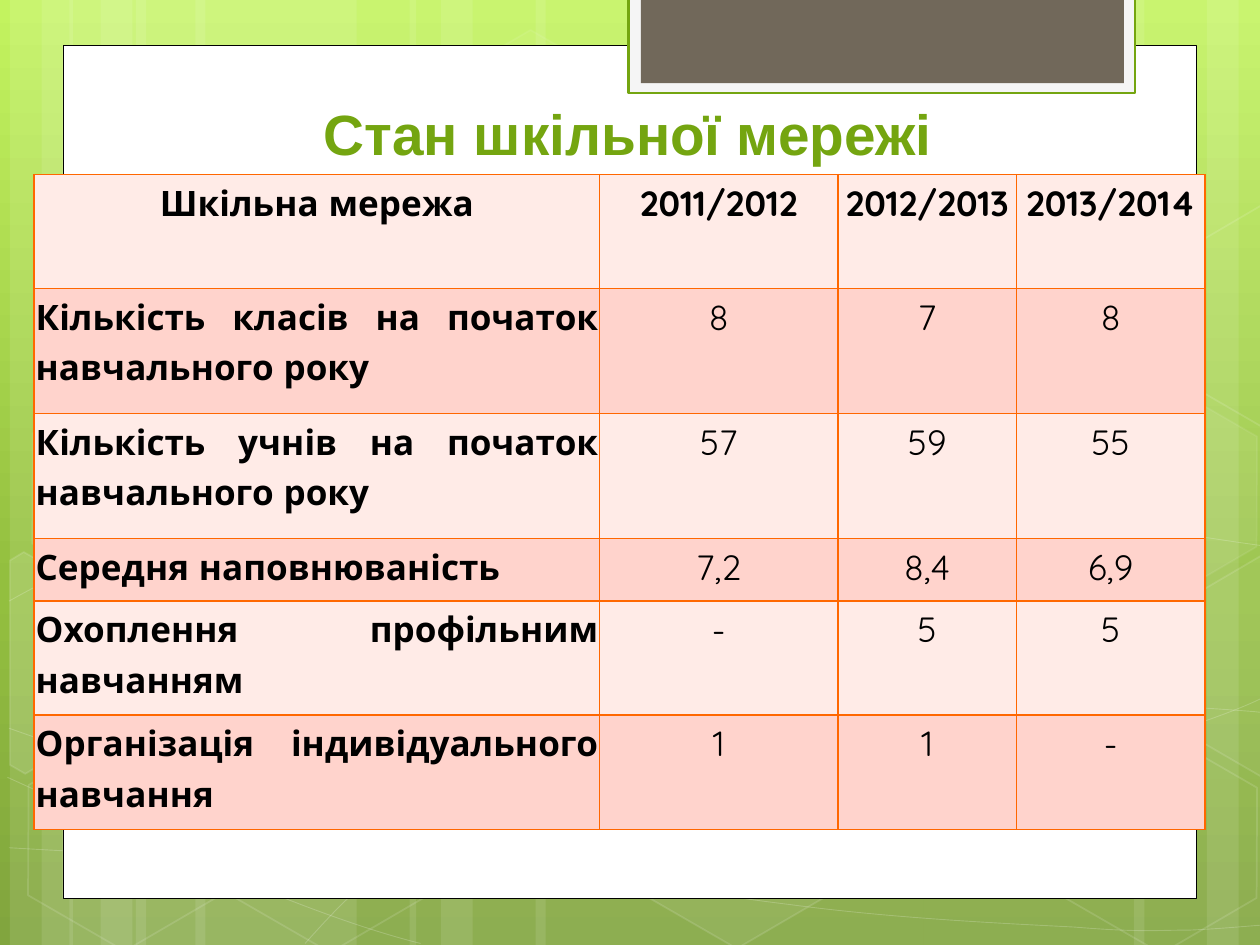
from copy import deepcopy
from dataclasses import dataclass
from typing import Optional

from lxml import etree
from pptx import Presentation
from pptx.dml.color import RGBColor
from pptx.enum.shapes import MSO_SHAPE
from pptx.enum.text import MSO_ANCHOR, PP_ALIGN
from pptx.oxml.ns import qn
from pptx.shapes.autoshape import Shape
from pptx.slide import Slide
from pptx.table import _Cell
from pptx.util import Cm, Pt

RECTANGLE, HEXAGON = MSO_SHAPE.RECTANGLE, MSO_SHAPE.HEXAGON
CENTER, JUSTIFY = PP_ALIGN.CENTER, PP_ALIGN.JUSTIFY
WHITE, BLACK, GREEN, ORANGE = "FFFFFF", "000000", "74A510", "FF6700"
WIDTH, HEIGHT = 25.4, 19.05
Point = tuple[float, float]


@dataclass
class Style:
    """Opacities are percentages; no colour means no fill or no line."""
    fill: Optional[str] = None
    fill_opacity: int = 100
    line: Optional[str] = None
    line_opacity: int = 100
    line_width: float = 1


@dataclass
class Hexagon:
    left: float
    top: float
    fill_opacity: int
    line_opacity: int


@dataclass
class CutHexagon:
    points: list[Point]
    fill_opacity: int


GRADIENT = [(0, "C3F35F"), (0.62, "93BF3F"), (1, "81A53E")]
BARS = [  # left, width
    (2.74, 4.45), (0.2, 1.27), (0.84, 2.11), (3.94, 4.45), (1.4, 1.27), (2.03, 2.11),
    (18.62, 4.45), (24.33, 1.27), (22.86, 2.11), (10.8, 7.82), (8.26, 1.27), (8.89, 2.11),
]
# Each curve: a start point, then two control points and an end point per segment
CURVES: list[list[Point]] = [
    [(0.18, 17.09), (1.55, 17.17), (2.92, 17.25), (4.83, 17.22),
     (6.73, 17.2), (9.09, 17.15), (11.63, 16.89), (14.17, 16.64), (17.78, 16.15), (20.12, 15.67),
     (22.43, 15.19), (24.82, 14.43), (25.58, 14)],
    [(0.18, 12.12), (0.91, 11.71), (1.65, 11.33), (3.07, 10.95),
     (4.52, 10.57), (6.58, 10.01), (8.81, 9.83), (11.07, 9.65), (13.82, 9.63), (16.61, 9.83),
     (19.41, 10.03), (24.05, 10.82), (25.58, 11.02)],
    [(0.15, 15.67), (3.23, 17.07), (6.27, 18.47), (8.48, 19.02)],
    [(0.18, 14.68), (0.97, 14.96), (1.78, 15.24), (3.25, 15.65),
     (4.72, 16.03), (6.93, 16.66), (9.07, 17.09), (11.18, 17.53), (13.84, 17.98), (15.95, 18.24),
     (18.06, 18.52), (20.32, 18.62), (21.67, 18.69), (22.99, 18.8), (23.34, 18.75), (24, 18.75),
     (24.66, 18.72), (25.12, 18.67), (25.58, 18.64)],
    [(6.15, 19.02), (6.6, 18.52), (7.06, 18.01), (7.67, 17.55),
     (8.28, 17.09), (9.14, 16.59), (9.86, 16.23), (10.57, 15.88), (11, 15.72), (11.94, 15.47),
     (12.85, 15.21), (14.55, 14.86), (15.44, 14.68), (16.36, 14.5), (16.48, 14.5), (17.27, 14.45),
     (18.06, 14.38), (19.3, 14.3), (20.17, 14.27), (21.06, 14.25), (22.5, 14.27), (22.5, 14.27),
     (22.5, 14.27), (24.21, 14.27), (24.21, 14.27), (24.66, 14.3), (25.1, 14.33), (25.32, 14.35),
     (25.55, 14.38), (25.48, 14.35), (25.55, 14.38)],
]
HEXAGONS = [
    Hexagon(8.48, 0.91, 4, 8), Hexagon(12.62, 14.96, 6, 12), Hexagon(0.28, 15.01, 0, 12),
    Hexagon(0.36, 7.92, 7, 8), Hexagon(4.42, 15.04, 0, 12), Hexagon(19.13, 11.51, 10, 12),
    Hexagon(21.18, 15.06, 0, 12), Hexagon(21.18, 7.98, 7, 8),
]
CUT_HEXAGONS = [
    CutHexagon([(0.2, 11.3), (0.48, 11.13), (2.44, 12.24), (2.41, 14.48),
                (0.51, 15.6), (0.2, 15.42)], 10),
    CutHexagon([(23.52, 12.32), (25.43, 11.2), (25.63, 11.33), (25.63, 15.57),
                (25.45, 15.67), (23.52, 14.55)], 4),
    CutHexagon([(23.52, 5.26), (25.43, 4.14), (25.65, 4.27), (25.63, 8.51),
                (25.45, 8.61), (23.52, 7.49)], 0),
]
COLUMN_WIDTHS = [11.4, 4.8, 3.6, 3.8]
ROW_HEIGHTS = [2.3, 2.52, 2.52, 1.26, 2.3, 2.3]
ROWS = [
    ["Шкільна мережа", "2011/2012", "2012/2013", "2013/2014"],
    ["Кількість класів на початок навчального року", "8", "7", "8"],
    ["Кількість учнів на початок навчального року", "57", "59", "55"],
    ["Середня наповнюваність", "7,2", "8,4", "6,9"],
    ["Охоплення профільним навчанням", "-", "5", "5"],
    ["Організація індивідуального навчання", "1", "1", "-"],
]


def color(value: str) -> RGBColor:
    return RGBColor.from_string(value)


def apply_style(shape: Shape, style: Style) -> None:
    shape.shadow.inherit = False
    for fill, value in ((shape.fill, style.fill), (shape.line.fill, style.line)):
        if value:
            fill.solid()
            fill.fore_color.rgb = color(value)
        else:
            fill.background()
    if style.line:
        shape.line.width = Pt(style.line_width)
    solid = f"{qn('a:solidFill')}/{qn('a:srgbClr')}"
    for route, opacity in ((solid, style.fill_opacity),
                           (f"{qn('a:ln')}/{solid}", style.line_opacity)):
        element = shape._element.spPr.find(route)
        if element is not None and opacity < 100:
            etree.SubElement(element, qn("a:alpha"), val=str(opacity * 1000))


def add_preset(slide: Slide, kind: MSO_SHAPE, left: float, top: float,
               width: float, height: float, style: Style) -> Shape:
    shape = slide.shapes.add_shape(kind, Cm(left), Cm(top), Cm(width), Cm(height))
    apply_style(shape, style)
    return shape


def add_outline(slide: Slide, points: list[Point], close: bool, style: Style) -> Shape:
    start, *rest = [(Cm(x), Cm(y)) for x, y in points]
    builder = slide.shapes.build_freeform(*start)
    builder.add_line_segments(rest, close=close)
    shape = builder.convert_to_shape()
    apply_style(shape, style)
    return shape


def bend(shape: Shape) -> None:
    """Join every three line segments of an outline into one cubic Bézier."""
    lines = list(shape._element.iter(qn("a:lnTo")))
    for first in range(0, len(lines), 3):
        curve, *others = lines[first:first + 3]
        curve.tag = qn("a:cubicBezTo")
        for line in others:
            curve.append(line[0])
            line.getparent().remove(line)


def fill_background(slide: Slide) -> None:
    fill = slide.background.fill
    fill.gradient()
    fill.gradient_angle = 270
    stop_list = slide._element.find(f".//{qn('a:gsLst')}")
    stop_list.append(deepcopy(stop_list[0]))
    for stop, (position, value) in zip(fill.gradient_stops, GRADIENT):
        stop.position = position
        stop.color.rgb = color(value)


def add_backdrop(slide: Slide) -> None:
    for left, width in BARS:
        add_preset(slide, RECTANGLE, left, 0, width, HEIGHT, Style(WHITE, 10))
    for curve in CURVES:
        bend(add_outline(slide, curve, False,
                         Style(line=WHITE, line_opacity=20, line_width=0.5)))
    for hexagon in HEXAGONS:
        style = Style(WHITE if hexagon.fill_opacity else None, hexagon.fill_opacity,
                      WHITE, hexagon.line_opacity)
        shape = add_preset(slide, HEXAGON, hexagon.left, hexagon.top, 4.45, 3.86, style)
        shape.adjustments[0] = 0.285
        shape.rotation = 30
    for cut in CUT_HEXAGONS:
        add_outline(slide, cut.points, True,
                    Style(WHITE if cut.fill_opacity else None, cut.fill_opacity, WHITE, 12))
    add_preset(slide, RECTANGLE, 1.27, 0.91, 22.86, 17.2,
               Style(WHITE, line=BLACK, line_width=0.5))
    add_preset(slide, RECTANGLE, 12.67, -0.05, 10.21, 1.93,
               Style("F5F5F5", line=GREEN, line_width=1.25))
    add_preset(slide, RECTANGLE, 12.92, -0.05, 9.74, 1.73, Style("71685A"))


def add_title(slide: Slide) -> None:
    frame = slide.shapes.add_textbox(Cm(2.9), Cm(1.92), Cm(19.51), Cm(1.57)).text_frame
    frame.word_wrap = True
    frame.vertical_anchor = MSO_ANCHOR.BOTTOM
    paragraph = frame.paragraphs[0]
    paragraph.text = "Стан шкільної мережі"
    paragraph.alignment = CENTER
    font = paragraph.font
    font.name, font.size, font.bold = "Arial", Pt(32.4), True
    font.color.rgb = color(GREEN)


def add_borders(cell: _Cell) -> None:
    properties = cell._tc.get_or_add_tcPr()
    for side in ("a:lnL", "a:lnR", "a:lnT", "a:lnB"):
        line = etree.SubElement(properties, qn(side), w=str(Pt(1)))
        solid = etree.SubElement(line, qn("a:solidFill"))
        etree.SubElement(solid, qn("a:srgbClr"), val=ORANGE)


def add_network_table(slide: Slide) -> None:
    table = slide.shapes.add_table(len(ROWS), len(COLUMN_WIDTHS), Cm(0.69), Cm(3.52),
                                   Cm(sum(COLUMN_WIDTHS)), Cm(sum(ROW_HEIGHTS))).table
    for column, width in zip(table.columns, COLUMN_WIDTHS):
        column.width = Cm(width)
    for i, (height, texts) in enumerate(zip(ROW_HEIGHTS, ROWS)):
        table.rows[i].height = Cm(height)
        for j, text in enumerate(texts):
            cell = table.cell(i, j)
            add_borders(cell)
            cell.fill.solid()
            cell.fill.fore_color.rgb = color("FFD3CC" if i % 2 else "FFEBE7")
            cell.margin_left = cell.margin_right = Cm(0.03)
            cell.margin_top = cell.margin_bottom = 0
            paragraph = cell.text_frame.paragraphs[0]
            paragraph.text = text
            paragraph.alignment = JUSTIFY if i and not j else CENTER
            paragraph.line_spacing = 1.15
            font = paragraph.font
            font.name, font.size, font.bold = "Quicksand", Pt(20), i == 0 or j == 0
            font.color.rgb = color(BLACK)


def main() -> None:
    presentation = Presentation()
    presentation.slide_width, presentation.slide_height = Cm(WIDTH), Cm(HEIGHT)
    slide = presentation.slides.add_slide(presentation.slide_layouts[6])
    fill_background(slide)
    add_backdrop(slide)
    add_title(slide)
    add_network_table(slide)
    presentation.save("out.pptx")


if __name__ == "__main__":
    main()
